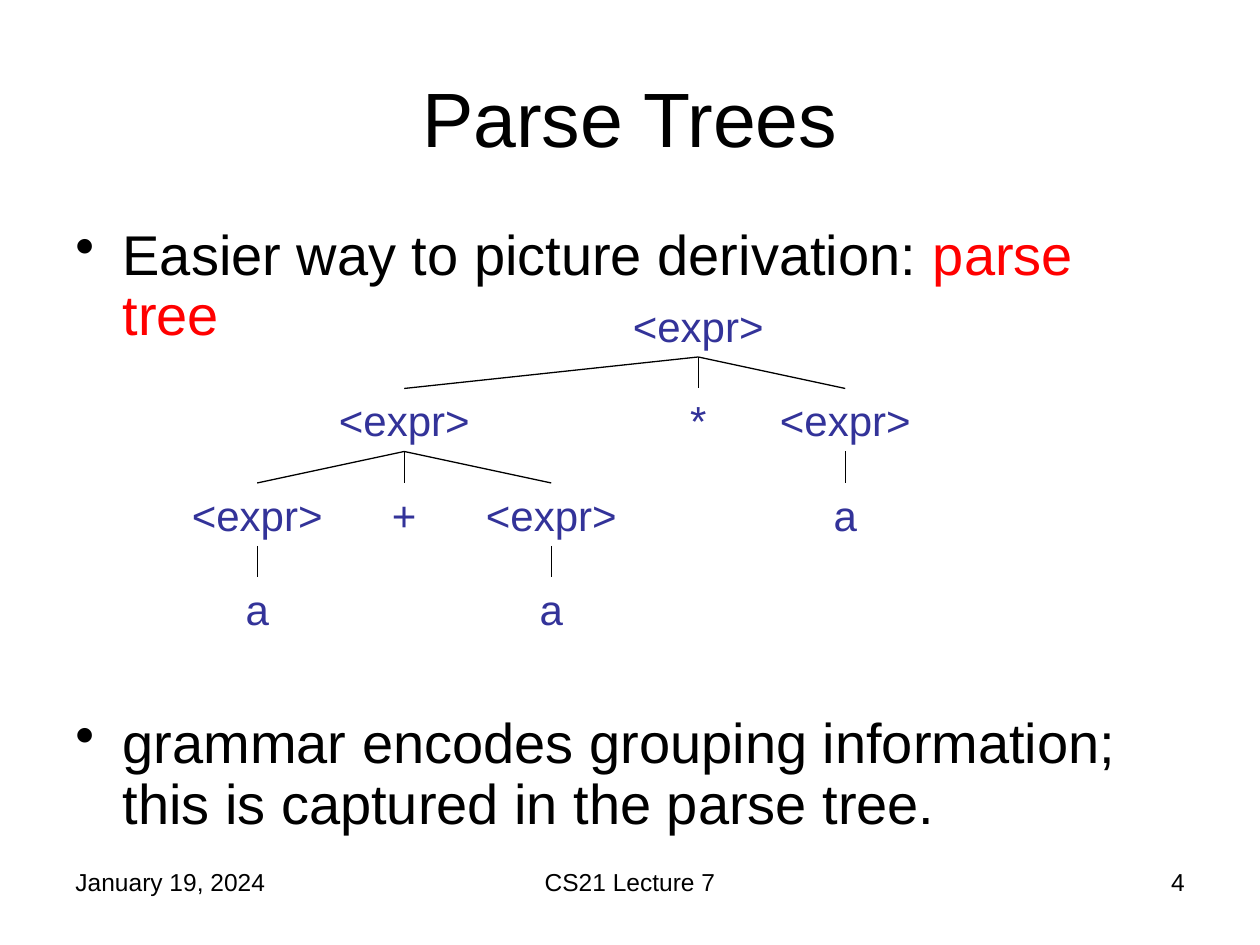
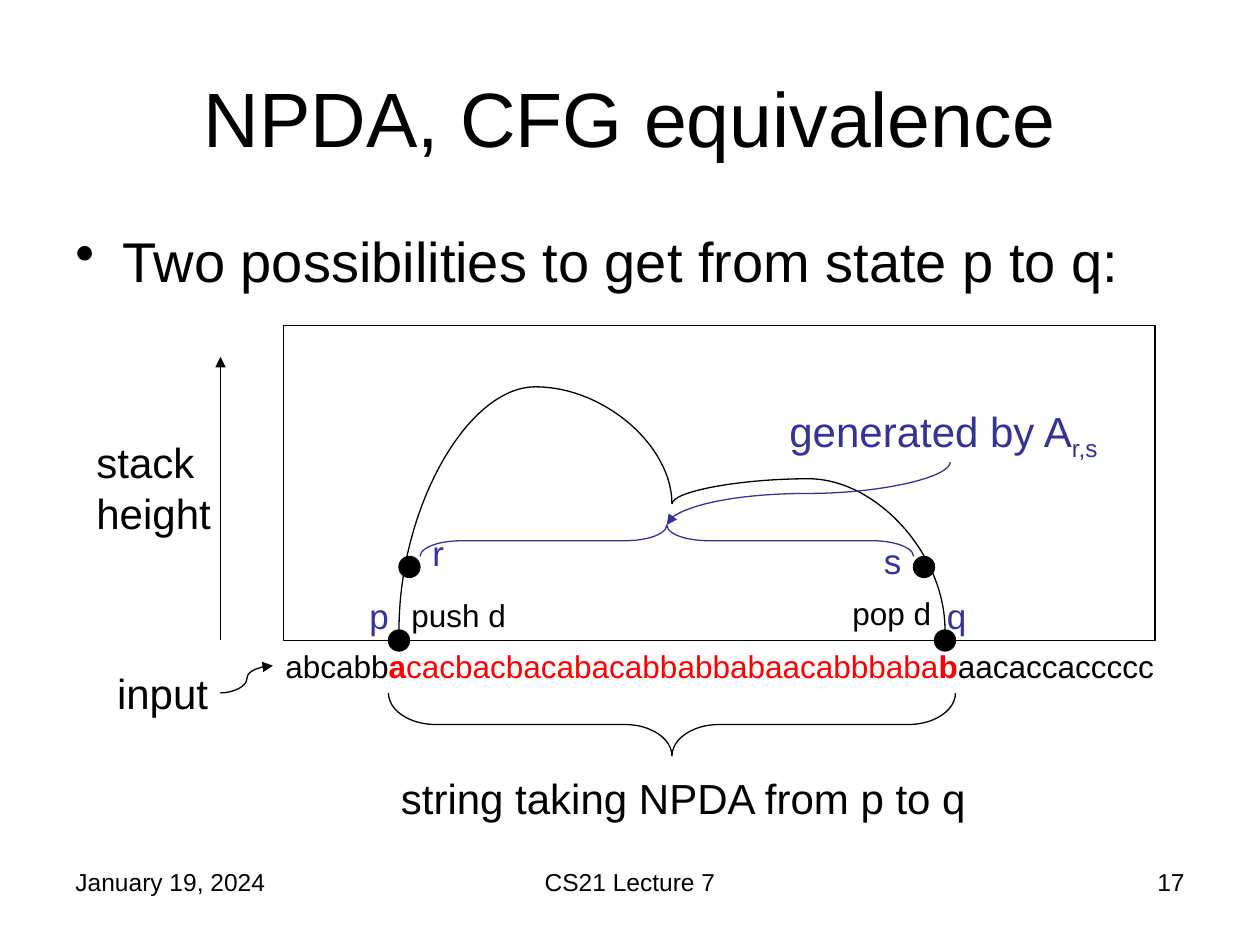
import dataclasses

import pptx
import pptx.dml.color
import pptx.enum.shapes
import pptx.enum.text
import pptx.oxml
import pptx.oxml.ns
import pptx.util

SHAPE = pptx.enum.shapes.MSO_SHAPE
CONNECTOR = pptx.enum.shapes.MSO_CONNECTOR
ALIGN = pptx.enum.text.PP_ALIGN
ANCHOR = pptx.enum.text.MSO_ANCHOR
CELL = pptx.util.Inches(1) / 12


@dataclasses.dataclass(frozen=True)
class Theme:
    """Hold the colours, font and type sizes of the lecture."""

    font: str = "Arial"
    ink: str = "000000"
    accent: str = "333399"
    highlight: str = "FF0000"
    title: int = 44
    body: int = 32
    label: int = 24
    state: int = 20
    small: int = 18
    footer: int = 14
    stroke: float = 0.75


@dataclasses.dataclass(frozen=True)
class Box:
    """Describe a region in grid cells, twelve to the inch."""

    left: float
    top: float
    width: float
    height: float

    def inner(self, left, top, width, height):
        """Return a box whose place is relative to this one."""
        return Box(self.left + left, self.top + top, width, height)

    def point(self, column, row):
        """Return the grid point at a place relative to this box."""
        return self.left + column, self.top + row

    def lengths(self):
        """Return left, top, width and height in slide units."""
        return [cells(value) for value in (self.left, self.top, self.width, self.height)]


THEME = Theme()
PAGE = Box(0, 0, 120, 90)
TITLE = PAGE.inner(6, 3.6, 108, 15)
BODY = PAGE.inner(6, 21, 108, 59.4)
FOOTER = PAGE.inner(6, 82, 108, 6.2)
TREE = PAGE.inner(17, 28, 71, 33)
DIAGRAM = PAGE.inner(8, 31, 105, 48)


def cells(count):
    """Convert grid cells to slide units."""
    return round(count * CELL)


def rgb(color):
    """Turn a hex string into a colour."""
    return pptx.dml.color.RGBColor.from_string(color)


def write(paragraph, text, size=THEME.label, color=THEME.ink, align=ALIGN.LEFT):
    """Write a string, or (string, format) pairs, into a paragraph."""
    paragraph.alignment = align
    for part, style in [(text, {})] if isinstance(text, str) else text:
        run = paragraph.add_run()
        run.text = part
        run.font.name = THEME.font
        run.font.size = pptx.util.Pt(size)
        run.font.bold = style.get("bold", False)
        run.font.color.rgb = rgb(style.get("color", color))
        if "baseline" in style:
            run.font._element.set("baseline", str(style["baseline"]))


def add_text(slide, box, text, **style):
    """Add a wrapping text box with one paragraph."""
    frame = slide.shapes.add_textbox(*box.lengths()).text_frame
    frame.word_wrap = True
    write(frame.paragraphs[0], text, **style)


def add_bullets(slide, box, items, line_spacing=1.0, gap=0):
    """Add a bulleted list with a gap in points between its items."""
    frame = slide.shapes.add_textbox(*box.lengths()).text_frame
    frame.word_wrap = True
    for index, item in enumerate(items):
        paragraph = frame.add_paragraph() if index else frame.paragraphs[0]
        write(paragraph, item, size=THEME.body)
        paragraph.line_spacing = line_spacing
        paragraph.space_before = pptx.util.Pt(gap if index else 0)
        properties = paragraph._p.get_or_add_pPr()
        indent = cells(4.5)
        properties.set("marL", str(indent))
        properties.set("indent", str(-indent))
        bullet = pptx.oxml.parse_xml(f'<a:buChar {pptx.oxml.ns.nsdecls("a")} char="•"/>')
        properties.append(bullet)


def add_outline(slide, kind, box, color=THEME.ink, fill=None, rotation=0, bend=None):
    """Add a preset shape with a thin outline."""
    shape = slide.shapes.add_shape(kind, *box.lengths())
    shape.shadow.inherit = False
    shape.rotation = rotation
    shape.line.color.rgb = rgb(color)
    shape.line.width = pptx.util.Pt(THEME.stroke)
    if fill:
        shape.fill.solid()
        shape.fill.fore_color.rgb = rgb(fill)
    else:
        shape.fill.background()
    if bend is not None:
        shape.adjustments[0] = bend


def add_line(slide, start, end, kind=CONNECTOR.STRAIGHT, color=THEME.ink, arrow=False):
    """Add a connector between two grid points."""
    line = slide.shapes.add_connector(kind, *map(cells, (*start, *end)))
    line.line.color.rgb = rgb(color)
    line.line.width = pptx.util.Pt(THEME.stroke)
    namespace = pptx.oxml.ns.nsdecls("a")
    if arrow:
        line.line._get_or_add_ln().append(
            pptx.oxml.parse_xml(f'<a:tailEnd {namespace} type="triangle"/>'))
    line._element.spPr.append(pptx.oxml.parse_xml(f"<a:effectLst {namespace}/>"))
    return line


def add_upright_curve(slide, start, end, bend=0.5, **style):
    """Add a curve that leaves and arrives vertically."""
    across, down = end[0] - start[0], end[1] - start[1]
    middle_x, middle_y = start[0] + across / 2, start[1] + down / 2
    half_width, half_height = abs(down) / 2, abs(across) / 2
    if (across > 0) == (down > 0):
        half_height = -half_height
    curve = add_line(slide, (middle_x - half_width, middle_y - half_height),
                     (middle_x + half_width, middle_y + half_height),
                     kind=CONNECTOR.CURVE, **style)
    properties = curve._element.spPr
    properties.xfrm.set("rot", str((90 if down > 0 else 270) * 60000))
    guides = properties.find(pptx.oxml.ns.qn("a:prstGeom")).find(pptx.oxml.ns.qn("a:avLst"))
    guides.append(pptx.oxml.parse_xml(
        f'<a:gd {pptx.oxml.ns.nsdecls("a")} name="adj1" fmla="val {round(bend * 100000)}"/>'))


def add_footer(slide, box, number):
    """Place the date, lecture name and slide number along the foot."""
    parts = ((0, 28, "January 19, 2024", ALIGN.LEFT),
             (35, 38, "CS21 Lecture 7", ALIGN.CENTER),
             (80, 28, str(number), ALIGN.RIGHT))
    for left, width, text, align in parts:
        add_text(slide, box.inner(left, 0, width, box.height), text,
                 size=THEME.footer, align=align)


def add_lecture_slide(presentation, title, number):
    """Add a slide with the shared title and footer."""
    slide = presentation.slides.add_slide(presentation.slide_layouts[5])
    heading = slide.shapes.title
    heading.left, heading.top, heading.width, heading.height = TITLE.lengths()
    heading.text_frame.vertical_anchor = ANCHOR.MIDDLE
    write(heading.text_frame.paragraphs[0], title, size=THEME.title, align=ALIGN.CENTER)
    add_footer(slide, FOOTER, number)
    return slide


def draw_tree(slide, box, node, level=0):
    """Draw a node and, below it, its children joined by lines."""
    label, column, children = node
    first_center, column_step, row_step, node_height = 7.5, 14, 9, 6
    center, top = first_center + column * column_step, level * row_step
    width = 15 if len(label) > 1 else 5
    add_text(slide, box.inner(center - width / 2, top, width, node_height), label,
             color=THEME.accent, align=ALIGN.CENTER)
    for child in children:
        add_line(slide, box.point(center, top + node_height),
                 box.point(first_center + child[1] * column_step, top + row_step))
        draw_tree(slide, box, child, level + 1)


def draw_stack_plot(slide, box):
    """Draw stack height over the input, with its states and moves."""
    add_outline(slide, SHAPE.RECTANGLE, box.inner(19, 0, 83, 30))
    add_line(slide, box.point(13, 30), box.point(13, 3), arrow=True)
    add_text(slide, box.inner(0, 10, 16, 10.8), "stack height")
    valley = box.point(56, 17)
    add_upright_curve(slide, box.point(30, 29), valley, bend=1.93)
    add_upright_curve(slide, valley, box.point(82, 29), bend=-0.2)
    for left, top in ((29, 29), (81, 29), (30, 22), (79, 22)):
        add_outline(slide, SHAPE.OVAL, box.inner(left, top, 2, 2), fill=THEME.ink)
    for state, left, top in (("p", 26, 25), ("q", 81, 25), ("r", 32, 19), ("s", 75, 19.8)):
        add_text(slide, box.inner(left, top, 5, 5.2), state,
                 size=THEME.state, color=THEME.accent)
    for move, left, top in (("push d", 30, 25.2), ("pop d", 72, 25)):
        add_text(slide, box.inner(left, top, 12, 4.8), move, size=THEME.small)
    add_outline(slide, SHAPE.LEFT_BRACE, box.inner(54, -3, 3, 47),
                color=THEME.accent, rotation=90, bend=1.31)
    add_text(slide, box.inner(66, 7, 33, 6),
             [("generated by A", {}), ("r,s", {"baseline": -25000})], color=THEME.accent)
    add_upright_curve(slide, box.point(82.5, 13), box.point(55.5, 19),
                      color=THEME.accent, arrow=True)


def draw_input(slide, box):
    """Write the input string and brace the part read from p to q."""
    inside = {"color": THEME.highlight}
    end = {"color": THEME.highlight, "bold": True}
    add_text(slide, box.inner(18, 30, 87, 4.8),
             [("abcabb", {}), ("a", end), ("cacbacbacabacabbabbabaacabbbaba", inside),
              ("b", end), ("aacaccaccccc", {})], size=THEME.small)
    add_text(slide, box.inner(1, 32, 12, 6), "input", align=ALIGN.RIGHT)
    add_line(slide, box.point(13, 35), box.point(18, 32.4),
             kind=CONNECTOR.CURVE, arrow=True)
    add_outline(slide, SHAPE.LEFT_BRACE, box.inner(53, 11, 6, 54), rotation=270, bend=0.75)
    add_text(slide, box.inner(29, 42, 58, 6), "string taking NPDA from p to q")


def add_parse_tree_slide(presentation):
    """Build the slide on parse trees."""
    slide = add_lecture_slide(presentation, "Parse Trees", 4)
    add_bullets(slide, BODY, [
        [("Easier way to picture derivation: ", {}),
         ("parse tree", {"color": THEME.highlight})],
        "grammar encodes grouping information; this is captured in the parse tree.",
    ], line_spacing=0.9, gap=210)

    def expression(column, *children):
        """Return an expression node, deriving a by default."""
        return "<expr>", column, children or (("a", column, ()),)

    addition = expression(1, expression(0), ("+", 1, ()), expression(2))
    draw_tree(slide, TREE, expression(3, addition, ("*", 3, ()), expression(4)))


def add_equivalence_slide(presentation):
    """Build the slide on the equivalence of NPDAs and CFGs."""
    slide = add_lecture_slide(presentation, "NPDA, CFG equivalence", 17)
    add_bullets(slide, BODY.inner(0, 0, BODY.width, 9),
                ["Two possibilities to get from state p to q:"])
    draw_stack_plot(slide, DIAGRAM)
    draw_input(slide, DIAGRAM)


def main():
    """Build and save the presentation."""
    presentation = pptx.Presentation()
    presentation.slide_width = cells(PAGE.width)
    presentation.slide_height = cells(PAGE.height)
    add_parse_tree_slide(presentation)
    add_equivalence_slide(presentation)
    presentation.save("out.pptx")


if __name__ == "__main__":
    main()
